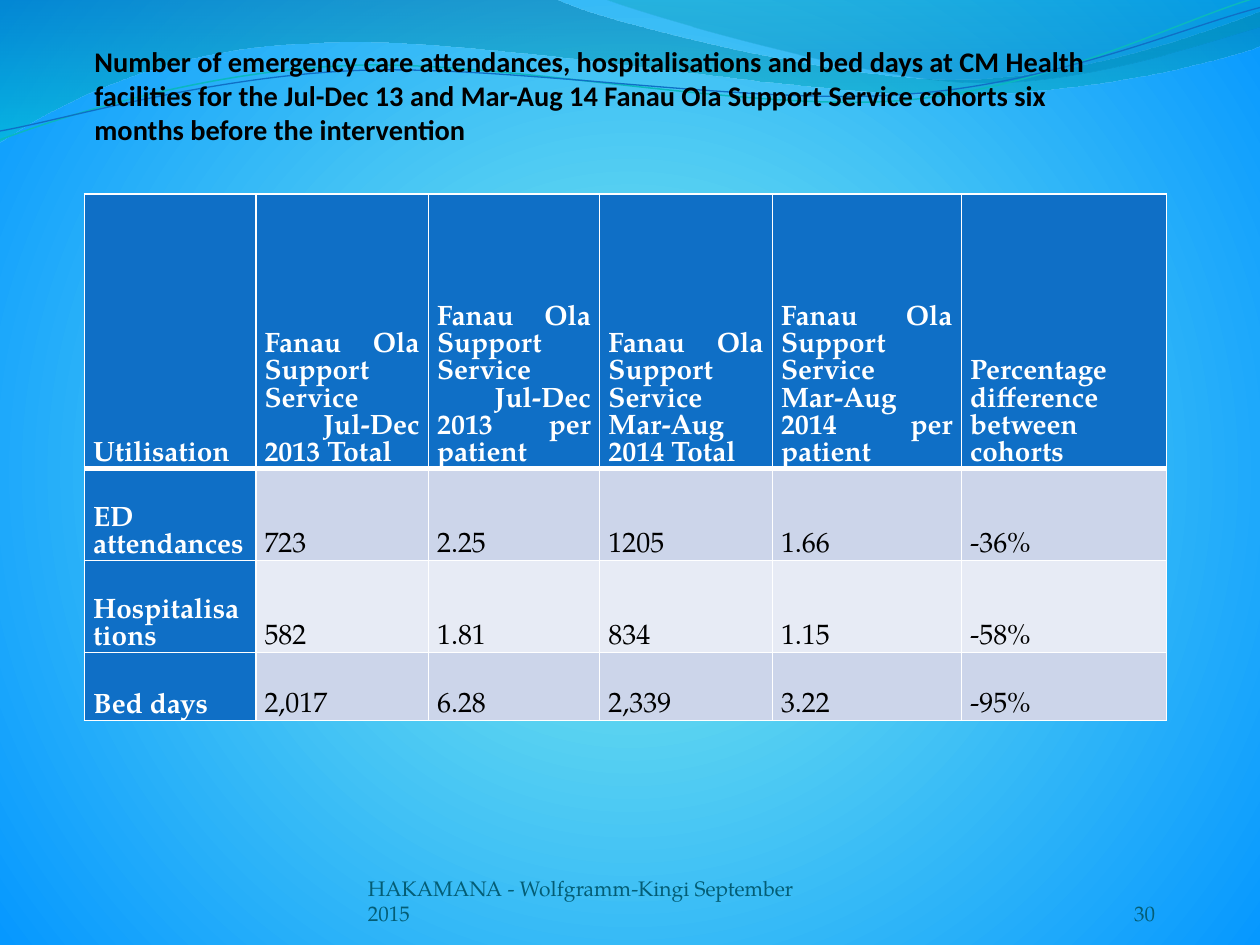
from lxml import etree
from pptx import Presentation
from pptx import util as u
from pptx.dml.color import RGBColor
from pptx.enum import text
from pptx.oxml import parse_xml
from pptx.oxml.ns import qn

Inches, Pt = u.Inches, u.Pt
color = RGBColor.from_string
SERIF = "TeX Gyre Pagella"
BLUE, WHITE, BLACK = "0F6FC6", "FFFFFF", "000000"


def gradient(stops, direction):
    """Gradient fill element from (position %, colour, opacity %) stops."""
    stop_xml = "".join(
        f'<a:gs pos="{position * 1000}"><a:srgbClr val="{value}">'
        f'<a:alpha val="{opacity * 1000}"/></a:srgbClr></a:gs>'
        for position, value, opacity in stops)
    return parse_xml(
        '<a:gradFill xmlns:a="http://schemas.openxmlformats.org/drawingml/2006/main" '
        f'rotWithShape="1"><a:gsLst>{stop_xml}</a:gsLst>{direction}</a:gradFill>')


def wave(slide, start, segments, closed):
    """Freeform of straight (2 numbers) and cubic (6 numbers) segments, in inches."""
    points = [(Inches(segment[i]), Inches(segment[i + 1]))
              for segment in segments for i in range(0, len(segment), 2)]
    builder = slide.shapes.build_freeform(Inches(start[0]), Inches(start[1]), scale=1.0)
    builder.add_line_segments(points, close=closed)
    shape = builder.convert_to_shape()
    shape.shadow.inherit = False
    # Join each three control points into one cubic curve
    lines = iter(list(shape._element.iter(qn("a:lnTo"))))
    for segment in segments:
        line = next(lines)
        if len(segment) == 6:
            curve = etree.Element(qn("a:cubicBezTo"))
            line.addprevious(curve)
            for control in (line, next(lines), next(lines)):
                curve.append(control[0])
                control.getparent().remove(control)
    return shape


presentation = Presentation()
presentation.slide_width, presentation.slide_height = Inches(10), Inches(7.5)
slide = presentation.slides.add_slide(presentation.slide_layouts[6])

# Background: radial glow
slide.background.fill.gradient()
old_gradient = slide.background._cSld.find(".//" + qn("a:gradFill"))
old_gradient.getparent().replace(old_gradient, gradient(
    [(0, "75E6EC", 100), (9, "75E6EC", 100), (100, "0698FF", 100)],
    '<a:path path="circle"><a:fillToRect l="50000" t="50000" r="50000" b="50000"/></a:path>'))

# Translucent waves along the top
filled_waves = [
    ((0, 0),
     [(4.4, -0.01), (4.76, 0.17, 6.64, 0.63, 7.58, 0.63), (8.53, 0.63, 9.58, 0.26, 10, 0.09),
      (10.01, 0.36), (9.83, 0.44, 8.7, 0.76, 7.46, 0.75), (6.22, 0.75, 3.82, 0.28, 2.57, 0.34),
      (1.29, 0.36, 0.46, 0.83, -0.01, 1.13)],
     [(0, "0074A1", 45), (100, "00C6CF", 55)]),
    ((4.79, -0.01),
     [(5.09, 0.11, 6.82, 0.62, 7.69, 0.65), (8.56, 0.69, 9.61, 0.32, 10, 0.21), (10, 0)],
     [(0, "00A1A9", 30), (80, "008BBF", 45)]),
]
for start, segments, stops in filled_waves:
    shape = wave(slide, start, segments, True)
    shape.line.fill.background()
    shape.fill.gradient()
    old_gradient = shape._element.spPr.find(qn("a:gradFill"))
    old_gradient.getparent().replace(old_gradient, gradient(stops, '<a:lin ang="5400000" scaled="0"/>'))

# Thin wave lines
wave_lines = [
    ((0, 1.11),
     [(0.48, 0.93, 1.58, 0.57, 2.77, 0.52), (3.95, 0.47, 5.93, 0.89, 7.13, 0.8),
      (8.33, 0.71, 9.38, 0.15, 9.98, -0.02)], "0AB8BF", 0.85),
    ((0, 1.04),
     [(0.47, 0.96, 1.64, 0.61, 2.83, 0.56), (4.03, 0.51, 5.97, 0.84, 7.17, 0.75),
      (8.36, 0.67, 9.41, 0.21, 10, 0.06)], BLUE, 0.75),
]
for start, segments, line_color, width in wave_lines:
    shape = wave(slide, start, segments, False)
    shape.fill.background()
    shape.line.color.rgb = color(line_color)
    shape.line.width = Pt(width)

# Title, footer and slide number
LEFT, CENTER = text.PP_ALIGN.LEFT, text.PP_ALIGN.CENTER
labels = [
    ("Number of emergency care attendances, hospitalisations and bed days at CM Health "
     "facilities for the Jul-Dec 13 and Mar-Aug 14 Fanau Ola Support Service cohorts six "
     "months before the intervention",
     (0.75, 0.34, 7.87, 0.82), "Calibri", 16.2, BLACK, True, LEFT),
    ("HAKAMANA - Wolfgramm-Kingi September 2015",
     (2.92, 6.95, 3.67, 0.4), SERIF, 12, "045D75", False, LEFT),
    ("30", (8.67, 6.95, 0.83, 0.4), SERIF, 12, "045D75", False, CENTER),
]
for wording, box, font_name, size, font_color, bold, alignment in labels:
    frame = slide.shapes.add_textbox(*map(Inches, box)).text_frame
    frame.word_wrap = True
    frame.vertical_anchor = text.MSO_ANCHOR.BOTTOM
    frame.margin_left = frame.margin_top = frame.margin_right = frame.margin_bottom = 0
    paragraph = frame.paragraphs[0]
    paragraph.text = wording
    paragraph.alignment = alignment
    paragraph.font.name, paragraph.font.size = font_name, Pt(size)
    paragraph.font.bold = bold
    paragraph.font.color.rgb = color(font_color)

# Utilisation table
service = "Fanau Ola Support Service\n"
rows = [
    ["Utilisation", service + " Jul-Dec 2013 Total", service + " Jul-Dec 2013 per patient",
     service + "Mar-Aug 2014 Total", service + "Mar-Aug 2014 per patient",
     "Percentage difference between cohorts"],
    ["ED attendances", "723", "2.25", "1205", "1.66", "-36%"],
    ["Hospitalisations", "582", "1.81", "834", "1.15", "-58%"],
    ["Bed days", "2,017", "6.28", "2,339", "3.22", "-95%"],
]
column_widths = [1.36, 1.37, 1.36, 1.37, 1.5, 1.63]
row_heights = [2.18, 0.73, 0.73, 0.54]
table = slide.shapes.add_table(
    len(rows), len(column_widths), Inches(0.67), Inches(1.54),
    Inches(sum(column_widths)), Inches(sum(row_heights))).table
for column, width in zip(table.columns, column_widths):
    column.width = Inches(width)
for row, height in zip(table.rows, row_heights):
    row.height = Inches(height)

for row_index, row in enumerate(rows):
    for column_index, wording in enumerate(row):
        cell = table.cell(row_index, column_index)
        heading = row_index == 0 or column_index == 0
        cell.text = wording
        cell.vertical_anchor = text.MSO_ANCHOR.BOTTOM
        cell.margin_left = cell.margin_right = Inches(0.07)
        cell.margin_top = cell.margin_bottom = 0
        for paragraph in cell.text_frame.paragraphs:
            paragraph.alignment = text.PP_ALIGN.JUSTIFY
            paragraph.font.name, paragraph.font.size = SERIF, Pt(16)
            paragraph.font.bold = heading
            paragraph.font.color.rgb = color(WHITE if heading else BLACK)

        # White borders, thicker around the header's lower edge
        properties = cell._tc.get_or_add_tcPr()
        for side in "LRTB":
            thick = (row_index, side) in [(0, "B"), (1, "T")]
            border = etree.SubElement(properties, qn("a:ln" + side), w=str(Pt(3 if thick else 1)))
            border_fill = etree.SubElement(border, qn("a:solidFill"))
            etree.SubElement(border_fill, qn("a:srgbClr"), val=WHITE)
        cell.fill.solid()
        band = "CCD5EA" if row_index % 2 else "E7EBF5"
        cell.fill.fore_color.rgb = color(BLUE if heading else band)

presentation.save("out.pptx")
